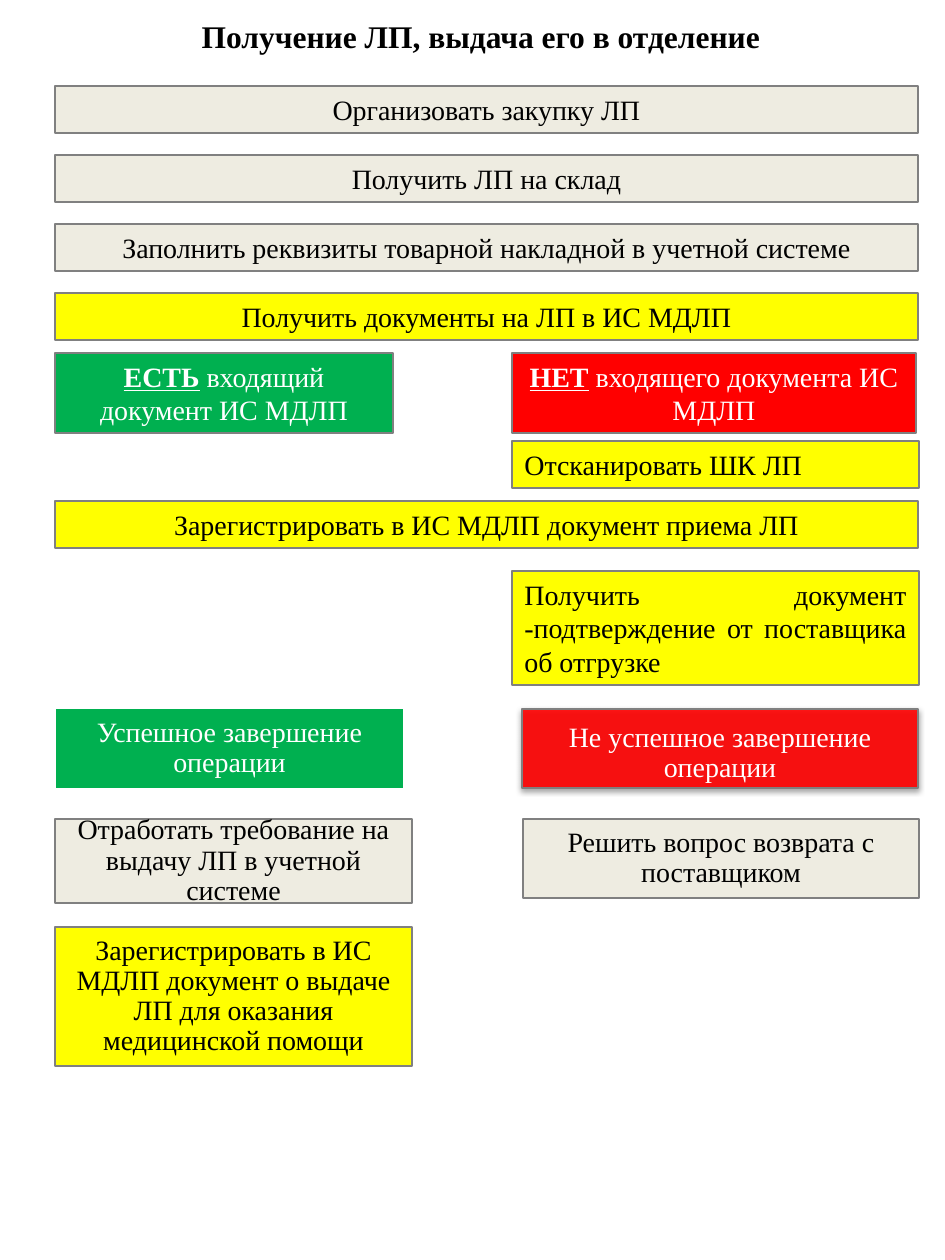
from lxml import etree
from pptx import Presentation, util as u
from pptx.dml.color import RGBColor
from pptx.enum import shapes, text
from pptx.oxml.ns import qn

PX = 914400 / 126
FONT = "Times New Roman"
BLACK, WHITE, GRAY = "000000", "FFFFFF", "808080"
BEIGE, YELLOW, GREEN, RED = "EEECE1", "FFFF00", "00B050", "FF0000"
CENTER, LEFT, JUSTIFY = text.PP_ALIGN.CENTER, text.PP_ALIGN.LEFT, text.PP_ALIGN.JUSTIFY

# Content
TITLE = "Получение ЛП, выдача его в отделение"
FIRST_STEPS = [
    ("Организовать закупку ЛП", BEIGE),
    ("Получить ЛП на склад", BEIGE),
    ("Заполнить реквизиты товарной накладной в учетной системе", BEIGE),
    ("Получить документы на ЛП в ИС МДЛП", YELLOW),
]
# Left, top, width, height, fill, font colour, alignment, emphasised word, wording
DOCUMENT_STEPS = [
    (55, 353, 338, 80, GREEN, WHITE, CENTER, "ЕСТЬ", " входящий документ ИС МДЛП"),
    (512, 353, 404, 80, RED, WHITE, CENTER, "НЕТ", " входящего документа ИС МДЛП"),
    (512, 441, 407, 47, YELLOW, BLACK, LEFT, "", "Отсканировать ШК ЛП"),
    (55, 501, 863, 47, YELLOW, BLACK, CENTER, "", "Зарегистрировать в ИС МДЛП документ приема ЛП"),
    (512, 571, 407, 114, YELLOW, BLACK, JUSTIFY, "",
     "Получить документ -подтверждение от поставщика об отгрузке"),
]
# Left, top, width, height, fill, line, font colour, wording
OUTCOMES = [
    (56, 709, 347, 79, GREEN, None, WHITE, "Успешное завершение операции"),
    (522, 719, 396, 69, None, None, WHITE, "Не успешное завершение операции"),
    (55, 819, 357, 84, BEIGE, GRAY, BLACK, "Отработать требование на выдачу ЛП в учетной системе"),
    (523, 819, 396, 79, BEIGE, GRAY, BLACK, "Решить вопрос возврата с поставщиком"),
    (55, 927, 357, 139, YELLOW, GRAY, BLACK,
     "Зарегистрировать в ИС МДЛП документ о выдаче ЛП для оказания медицинской помощи"),
]


def px(n):
    return round(n * PX)


def rgb(value):
    return RGBColor.from_string(value)


def style_font(font, size, color):
    font.name, font.size, font.color.rgb = FONT, u.Pt(size), rgb(color)


def add_box(left, top, width, height, fill, line):
    place = [px(n) for n in (left, top, width, height)]
    if fill is None:
        return slide.shapes.add_textbox(*place)
    box = slide.shapes.add_shape(shapes.MSO_SHAPE.RECTANGLE, *place)
    box.shadow.inherit = False
    box.fill.solid()
    box.fill.fore_color.rgb = rgb(fill)
    if line:
        box.line.color.rgb = rgb(line)
        box.line.width = u.Pt(0.75)
    else:
        box.line.fill.background()
    return box


def write(box, wording, color, align=CENTER, emphasis="", size=16):
    frame = box.text_frame
    frame.word_wrap = True
    paragraph = frame.paragraphs[0]
    paragraph.alignment = align
    style_font(paragraph.font, size, color)
    if emphasis:
        run = paragraph.add_run()
        run.text = emphasis
        run.font.bold = run.font.underline = True
    paragraph.add_run().text = wording
    return frame


def add_step(left, top, width, height, fill, color, align, emphasis, wording):
    frame = write(add_box(left, top, width, height, fill, GRAY), wording, color, align, emphasis)
    frame.vertical_anchor = text.MSO_ANCHOR.TOP
    frame.auto_size = text.MSO_AUTO_SIZE.SHAPE_TO_FIT_TEXT


def add_outcome(left, top, width, height, fill, line, color, wording):
    frame = write(add_box(left, top, width, height, fill, line), wording, color)
    frame.vertical_anchor = text.MSO_ANCHOR.MIDDLE
    frame.margin_left = frame.margin_right = frame.margin_top = frame.margin_bottom = px(1)
    frame.paragraphs[0].line_spacing = 0.9


def add_alpha(color_element, percent):
    etree.SubElement(color_element, qn("a:alpha"), val=str(percent * 1000))


prs = Presentation()
prs.slide_width, prs.slide_height = u.Inches(7.5), u.Inches(10)
slide = prs.slides.add_slide(prs.slide_layouts[6])

# Title
title = write(add_box(45, 16, 872, 40, None, None), TITLE, BLACK, size=18)
title.vertical_anchor = text.MSO_ANCHOR.MIDDLE
title.paragraphs[0].font.bold = True

# Full-width steps at an equal pitch
for row, (wording, fill) in enumerate(FIRST_STEPS):
    add_step(55, 86 + 69 * row, 863, 47, fill, BLACK, CENTER, "", wording)

# Document handling
for step in DOCUMENT_STEPS:
    add_step(*step)

# Translucent panel with a shadow behind the failure wording
failure = add_box(522, 709, 396, 79, RED, GRAY)
properties = failure.fill._xPr
add_alpha(properties.find(qn("a:solidFill"))[0], 90)
shadow = etree.SubElement(properties.find(qn("a:effectLst")), qn("a:outerShdw"),
                          blurRad=str(u.Pt(3.1)), dist=str(u.Pt(1.6)),
                          dir="5400000", rotWithShape="0")
add_alpha(etree.SubElement(shadow, qn("a:srgbClr"), val=BLACK), 38)

# Outcomes and follow-up
for outcome in OUTCOMES:
    add_outcome(*outcome)

prs.save("out.pptx")
